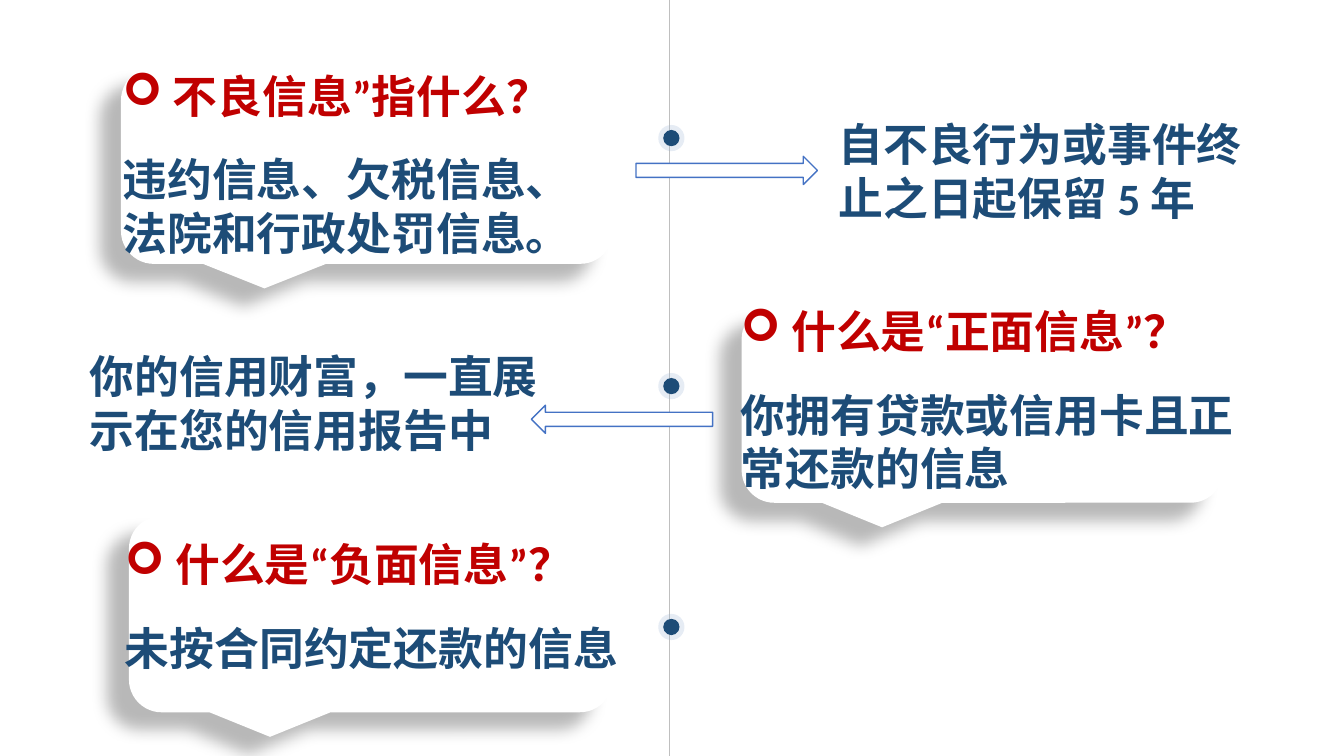
from lxml import etree
from pptx import Presentation
from pptx.dml.color import RGBColor
from pptx.enum import lang, shapes, text
from pptx.oxml import parse_xml
from pptx.oxml.ns import nsdecls, qn
from pptx.util import Cm, Pt

WHITE = RGBColor(0xFF, 0xFF, 0xFF)
NAVY = RGBColor(0x1D, 0x4C, 0x77)
RED = RGBColor(0xC0, 0x00, 0x00)
HALO = RGBColor(0x9F, 0xB8, 0xD6)
GREY = RGBColor(0xBF, 0xBF, 0xBF)
ARROW_BLUE = RGBColor(0x44, 0x72, 0xC4)

SLIDE_W, SLIDE_H = 33.87, 19.05
FONT = "Calibri"
BODY_FORMAT = {
    "name": FONT,
    "size": Pt(32),
    "bold": True,
    "language_id": lang.MSO_LANGUAGE_ID.SIMPLIFIED_CHINESE,
}
SHADOW = (
    f'<a:effectLst {nsdecls("a")}>'
    f'<a:outerShdw blurRad="{Pt(11.8)}" dist="{Pt(19.7)}" dir="{141 * 60000}" rotWithShape="0">'
    '<a:srgbClr val="000000"><a:alpha val="28000"/></a:srgbClr>'
    "</a:outerShdw></a:effectLst>"
)

# callout box, text box, question, answer
QUESTIONS = [
    ((3.05, 1.7, 12.4, 4.95), (2.84, 1.6, 12.85, 5.89),
     "不良信息”指什么？", "违约信息、欠税信息、法院和行政处罚信息。"),
    ((18.69, 7.72, 12.14, 4.95), (18.42, 7.54, 13.31, 5.89),
     "什么是“正面信息”？", "你拥有贷款或信用卡且正常还款的信息"),
    ((3.25, 13, 12.19, 4.95), (2.9, 13.41, 13.21, 4.52),
     "什么是“负面信息”？", "未按合同约定还款的信息"),
]
# arrow box, rotation, text box, consequence
CONSEQUENCES = [
    ((16.03, 3.94, 4.57, 0.71), 0, (20.88, 2.82, 11.28, 3),
     "自不良行为或事件终止之日起保留 5 年"),
    ((13.39, 10.21, 4.57, 0.71), 180, (2.01, 8.66, 12.17, 3.76),
     "你的信用财富，一直展示在您的信用报告中"),
]


def lengths(box):
    return [Cm(value) for value in box]


def add_plain_shape(parent, kind, box, fill):
    """Add a shape with a solid fill, no line and no shadow."""
    shape = parent.add_shape(kind, *lengths(box))
    shape.shadow.inherit = False
    shape.fill.solid()
    shape.fill.fore_color.rgb = fill
    shape.line.fill.background()
    return shape


def write(paragraph, words, color):
    run = paragraph.add_run()
    run.text = words
    for key, value in BODY_FORMAT.items():
        setattr(run.font, key, value)
    run.font.color.rgb = color
    east_asian = etree.SubElement(run.font._element, qn("a:ea"))
    east_asian.set("typeface", FONT)


def add_text_frame(slide, box):
    frame = slide.shapes.add_textbox(*lengths(box)).text_frame
    frame.word_wrap = True
    frame.vertical_anchor = text.MSO_ANCHOR.TOP
    return frame


def add_bullet(paragraph):
    properties = paragraph._p.get_or_add_pPr()
    properties.set("marL", str(Cm(1.27)))
    properties.set("indent", str(-Cm(1.27)))
    etree.SubElement(properties, qn("a:buFont")).set("typeface", "Wingdings")
    etree.SubElement(properties, qn("a:buChar")).set("char", "➢")


def add_timeline(slide, line_x, dot_x, dot_centers):
    axis = slide.shapes.add_connector(
        shapes.MSO_CONNECTOR.STRAIGHT, Cm(line_x), 0, Cm(line_x), Cm(SLIDE_H))
    axis.line.color.rgb = GREY
    axis.line.width = Pt(0.5)
    etree.SubElement(axis._element.spPr, qn("a:effectLst"))
    for center in dot_centers:
        marker = slide.shapes.add_group_shape().shapes
        for size, color in ((0.66, HALO), (0.41, NAVY)):
            box = (dot_x - size / 2, center - size / 2, size, size)
            dot = add_plain_shape(marker, shapes.MSO_SHAPE.OVAL, box, color)
            if color == HALO:
                tint = dot._element.spPr.find(".//" + qn("a:srgbClr"))
                etree.SubElement(tint, qn("a:alpha")).set("val", "26000")


def add_question(slide, callout_box, text_box, question, answer):
    callout = add_plain_shape(
        slide.shapes, shapes.MSO_SHAPE.ROUNDED_RECTANGULAR_CALLOUT, callout_box, WHITE)
    properties = callout._element.spPr
    properties.replace(properties.find(qn("a:effectLst")), parse_xml(SHADOW))

    frame = add_text_frame(slide, text_box)
    heading = frame.paragraphs[0]
    heading.space_after = Pt(21)
    add_bullet(heading)
    write(heading, question, RED)
    write(frame.add_paragraph(), answer, NAVY)


def add_consequence(slide, arrow_box, rotation, text_box, words):
    arrow = add_plain_shape(slide.shapes, shapes.MSO_SHAPE.RIGHT_ARROW, arrow_box, WHITE)
    arrow.rotation = rotation
    arrow.line.color.rgb = ARROW_BLUE
    arrow.line.width = Pt(1)
    write(add_text_frame(slide, text_box).paragraphs[0], words, NAVY)


def main():
    deck = Presentation()
    deck.slide_width, deck.slide_height = Cm(SLIDE_W), Cm(SLIDE_H)
    slide = deck.slides.add_slide(deck.slide_layouts[6])
    add_timeline(slide, 16.87, 16.92, (3.48, 9.73, 15.8))
    for question in QUESTIONS:
        add_question(slide, *question)
    for consequence in CONSEQUENCES:
        add_consequence(slide, *consequence)
    deck.save("out.pptx")


if __name__ == "__main__":
    main()
